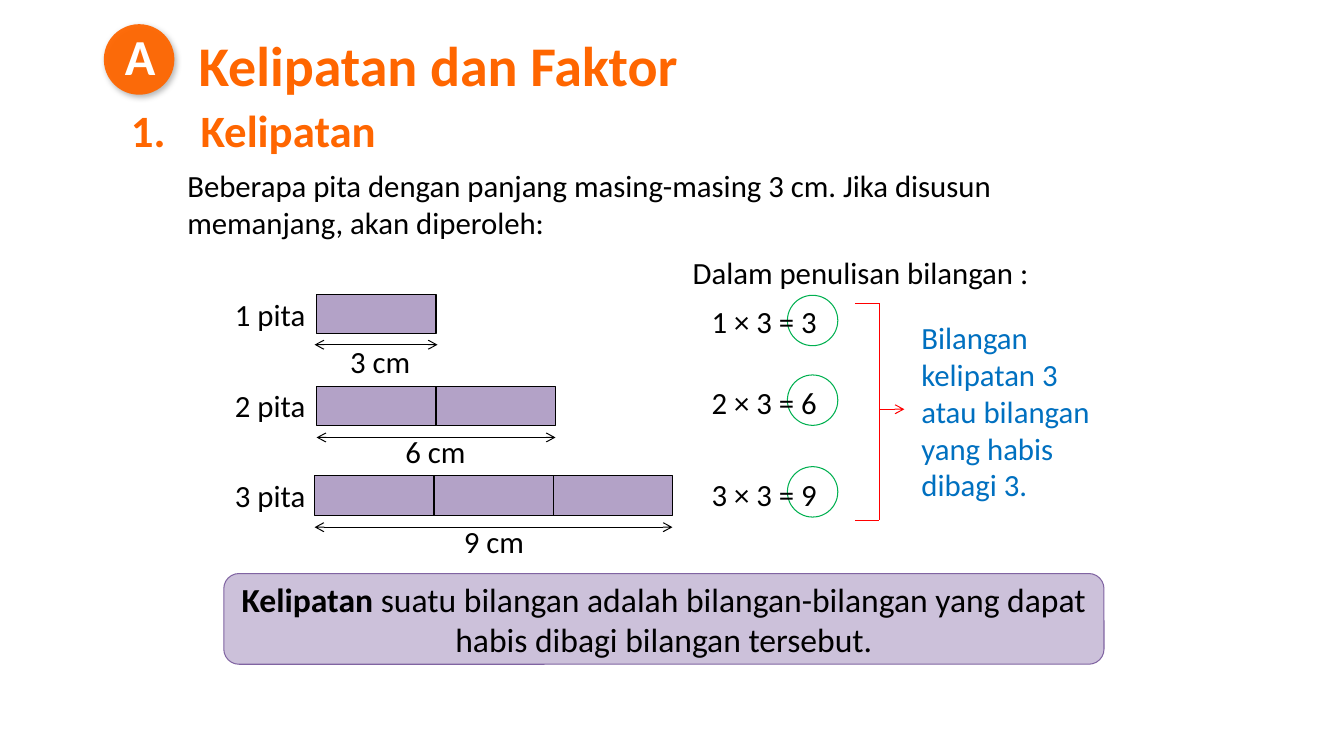
from dataclasses import dataclass

from lxml.etree import SubElement
from pptx import Presentation
from pptx.dml.color import RGBColor
from pptx.enum.shapes import MSO_CONNECTOR, MSO_SHAPE
from pptx.enum.text import MSO_ANCHOR, MSO_AUTO_SIZE, PP_ALIGN
from pptx.oxml.ns import qn
from pptx.util import Inches, Pt

COLORS = {
    "orange": "FF6600", "black": "000000", "white": "FFFFFF",
    "ribbon": "B3A2C7", "box": "CCC1DA", "box_line": "8064A2",
    "green": "00B050", "red": "FF0000", "blue": "0070C0",
}
RIBBON_W, RIBBON_H = 1.185, 0.39


@dataclass
class RibbonRow:
    count: int
    left: float
    top: float
    arrow: tuple[float, float]
    arrow_y: float
    length_center: tuple[float, float]
    label_top: float
    equation_top: float
    circle_top: float


ROWS = [
    RibbonRow(1, 3.14, 2.92, (3.12, 4.34), 3.42, (3.77, 3.58), 2.82, 2.89, 2.93),
    RibbonRow(2, 3.14, 3.83, (3.14, 5.51), 4.34, (4.32, 4.48), 3.72, 3.69, 3.72),
    RibbonRow(3, 3.12, 4.72, (3.12, 6.67), 5.23, (4.9, 5.37), 4.62, 4.61, 4.63),
]


def rgb(name: str) -> RGBColor:
    return RGBColor.from_string(COLORS[name])


def style_run(r, size: float, color: str, bold: bool = False) -> None:
    r.font.name = "Calibri"
    r.font.size = Pt(size)
    r.font.bold = bold
    r.font.color.rgb = rgb(color)


def format_text(sp, text: str, size: float, color: str, bold: bool = False,
                align=PP_ALIGN.LEFT, anchor=MSO_ANCHOR.MIDDLE, wrap: bool = True) -> None:
    tf = sp.text_frame
    tf.text = text
    tf.word_wrap = wrap
    tf.auto_size = MSO_AUTO_SIZE.NONE
    tf.vertical_anchor = anchor
    p = tf.paragraphs[0]
    p.alignment = align
    for r in p.runs:
        style_run(r, size, color, bold)


def add_text(s, box: tuple, text: str, size: float = 22, color: str = "black", **options):
    sp = s.shapes.add_textbox(*map(Inches, box))
    format_text(sp, text, size, color, **options)
    return sp


def add_shape(s, kind, box: tuple, fill: str | None, line: str | None):
    sp = s.shapes.add_shape(kind, *map(Inches, box))
    sp.shadow.inherit = False
    if fill:
        sp.fill.solid()
        sp.fill.fore_color.rgb = rgb(fill)
    else:
        sp.fill.background()
    if line:
        sp.line.color.rgb = rgb(line)
        sp.line.width = Pt(0.75)
    else:
        sp.line.fill.background()
    return sp


def add_line(s, start: tuple, end: tuple, color: str, *ends: str) -> None:
    """Draw a thin line; ends may name headEnd and tailEnd."""
    sp = s.shapes.add_connector(MSO_CONNECTOR.STRAIGHT, *map(Inches, start + end))
    sp.line.color.rgb = rgb(color)
    sp.line.width = Pt(0.75)
    ln = sp.line._get_or_add_ln()
    for end_name in ends:
        SubElement(ln, qn(f"a:{end_name}"), type="arrow")
    SubElement(sp._element.spPr, qn("a:effectLst"))


def add_header(s) -> None:
    title = s.shapes.title
    title.left, title.top, title.width, title.height = map(Inches, (1.87, 0.25, 5.01, 0.77))
    format_text(title, "Kelipatan dan Faktor", 40, "orange", bold=True,
                anchor=MSO_ANCHOR.TOP, wrap=False)

    # Section badge, slightly transparent with a soft shadow
    badge = add_shape(s, MSO_SHAPE.OVAL, (1.03, 0.24, 0.7, 0.7), "orange", None)
    fill_color = badge._element.spPr.find(qn("a:solidFill"))[0]
    SubElement(fill_color, qn("a:alpha"), val="95000")
    effects = badge._element.spPr.find(qn("a:effectLst"))
    shadow = SubElement(effects, qn("a:outerShdw"), blurRad=str(Pt(4.5)),
                        dist=str(Pt(2.6)), dir=str(53 * 60000))
    shadow_color = SubElement(shadow, qn("a:srgbClr"), val=COLORS["black"])
    SubElement(shadow_color, qn("a:alpha"), val="30000")
    add_text(s, (1.14, 0.2, 0.51, 0.71), "A", 36, "white", bold=True,
             anchor=MSO_ANCHOR.TOP, wrap=False)

    # Numbered heading with a tab stop
    heading = add_text(s, (1.2, 0.97, 2.65, 0.64), "1.\tKelipatan", 32, "orange",
                       bold=True, anchor=MSO_ANCHOR.TOP, wrap=False)
    p_pr = heading.text_frame.paragraphs[0]._p.get_or_add_pPr()
    tabs = SubElement(p_pr, qn("a:tabLst"))
    SubElement(tabs, qn("a:tab"), pos=str(Inches(0.69)), algn="l")

    add_text(s, (1.76, 1.44, 9.03, 1.16),
             "Beberapa pita dengan panjang masing-masing 3 cm. "
             "Jika disusun memanjang, akan diperoleh:")


def add_ribbon_row(s, row: RibbonRow) -> None:
    center = PP_ALIGN.CENTER
    for i in range(row.count):
        add_shape(s, MSO_SHAPE.RECTANGLE,
                  (row.left + i * RIBBON_W, row.top, RIBBON_W, RIBBON_H), "ribbon", "black")
    x1, x2 = row.arrow
    add_line(s, (x1, row.arrow_y), (x2, row.arrow_y), "black", "headEnd", "tailEnd")
    x, y = row.length_center
    add_text(s, (x - 0.65, y - 0.2, 1.3, 0.4), f"{row.count * 3} cm", align=center)
    add_text(s, (2.1, row.label_top, 1.16, 0.59), f"{row.count} pita", align=center)
    add_shape(s, MSO_SHAPE.OVAL, (7.81, row.circle_top, 0.5, 0.5), None, "green")
    add_text(s, (6.77, row.equation_top, 1.62, 0.59),
             f"{row.count} × 3 = {row.count * 3}", align=center)


def add_bracket(s) -> None:
    left, right, top, bottom = 8.48, 8.72, 3.01, 5.16
    add_line(s, (right, top), (right, bottom), "red")
    for y in (top, bottom):
        add_line(s, (left, y), (right, y), "red")
    add_line(s, (right, 4.06), (8.97, 4.06), "red", "tailEnd")
    add_text(s, (9.04, 3.18, 1.92, 1.79),
             "Bilangan kelipatan 3 atau bilangan yang habis dibagi 3.", color="blue")


def add_definition(s) -> None:
    sp = add_shape(s, MSO_SHAPE.ROUNDED_RECTANGLE, (2.22, 5.69, 8.73, 0.9), "box", "box_line")
    format_text(sp, "Kelipatan", 24, "black", bold=True, align=PP_ALIGN.CENTER)
    r = sp.text_frame.paragraphs[0].add_run()
    r.text = " suatu bilangan adalah bilangan-bilangan yang dapat habis dibagi bilangan tersebut."
    style_run(r, 24, "black")


def main() -> None:
    prs = Presentation()
    prs.slide_width, prs.slide_height = Inches(13.33), Inches(7.5)
    s = prs.slides.add_slide(prs.slide_layouts[5])
    add_header(s)
    add_text(s, (6.54, 2.41, 3.99, 0.59), "Dalam penulisan bilangan :", align=PP_ALIGN.CENTER)
    for row in ROWS:
        add_ribbon_row(s, row)
    add_bracket(s)
    add_definition(s)
    prs.save("out.pptx")


if __name__ == "__main__":
    main()
